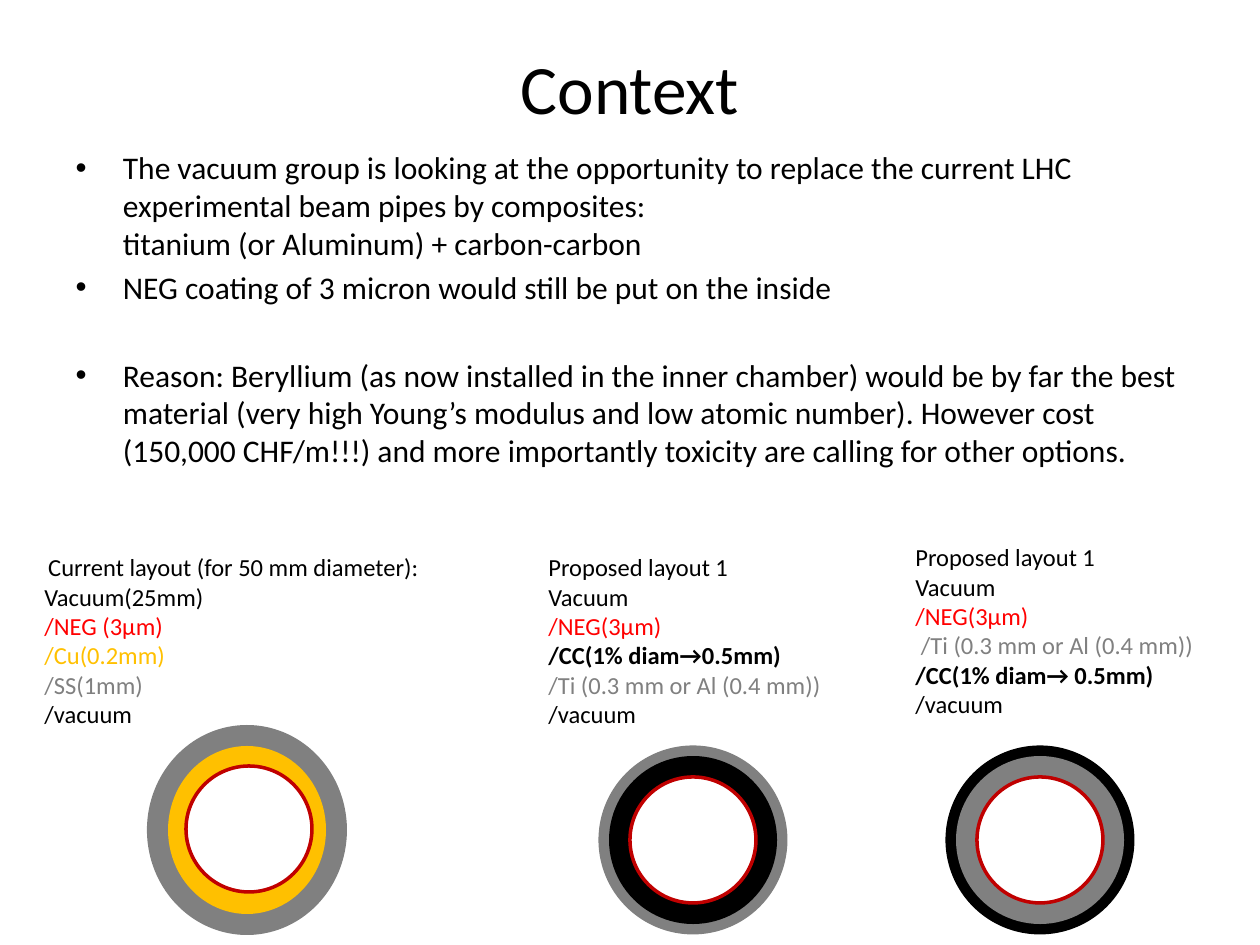
from pptx import Presentation
from pptx.dml.color import RGBColor
from pptx.enum.shapes import MSO_SHAPE as Preset
from pptx.enum.text import MSO_ANCHOR as Anchor, MSO_AUTO_SIZE as AutoSize, PP_ALIGN as Align
from pptx.util import Emu, Pt

BLACK = RGBColor(0, 0, 0)
WHITE = RGBColor(255, 255, 255)
GREY = RGBColor(0x80, 0x80, 0x80)
AMBER = RGBColor(0xFF, 0xC0, 0x00)
RED = RGBColor(0xFF, 0, 0)
DARK_RED = RGBColor(0xC0, 0, 0)


class SlideBuilder:
    font = "Calibri"
    title_size = 39.6
    body_size = 18
    label_size = 14
    px_per_inch = 126

    def __init__(self, deck):
        self.page = deck.slides.add_slide(deck.slide_layouts[1])

    @classmethod
    def px(cls, length):
        return Emu(round(length * 914400 / cls.px_per_inch))

    def place(self, box, left, top, width, height):
        box.left, box.top = self.px(left), self.px(top)
        box.width, box.height = self.px(width), self.px(height)

    def add_text(self, frame, paragraphs, size):
        for index, lines in enumerate(paragraphs):
            para = frame.paragraphs[0] if index == 0 else frame.add_paragraph()
            for number, (text, color, bold) in enumerate(lines):
                if number:
                    para.add_line_break()
                span = para.add_run()
                span.text = text
                span.font.name = self.font
                span.font.size = Pt(size)
                span.font.color.rgb = color
                span.font.bold = bold

    def title(self, text, *bounds):
        box = self.page.shapes.title
        self.place(box, *bounds)
        frame = box.text_frame
        frame.auto_size = AutoSize.NONE
        frame.vertical_anchor = Anchor.MIDDLE
        self.add_text(frame, [[line(text)]], self.title_size)
        frame.paragraphs[0].alignment = Align.CENTER

    def bullets(self, paragraphs, *bounds):
        box = self.page.placeholders[1]
        self.place(box, *bounds)
        frame = box.text_frame
        frame.auto_size = AutoSize.NONE
        self.add_text(frame, paragraphs, self.body_size)
        frame.paragraphs[-1].space_before = Pt(28.5)

    def label(self, paragraphs, *bounds, heading=Align.LEFT):
        box = self.page.shapes.add_textbox(*map(self.px, bounds))
        frame = box.text_frame
        frame.word_wrap = False
        frame.auto_size = AutoSize.SHAPE_TO_FIT_TEXT
        self.add_text(frame, paragraphs, self.label_size)
        frame.paragraphs[0].alignment = heading

    def disc(self, center_x, center_y, width, height, fill, outline=None):
        bounds = (center_x - width / 2, center_y - height / 2, width, height)
        disc = self.page.shapes.add_shape(Preset.OVAL, *map(self.px, bounds))
        disc.shadow.inherit = False
        disc.fill.solid()
        disc.fill.fore_color.rgb = fill
        if outline is None:
            disc.line.fill.background()
        else:
            disc.line.color.rgb = outline
            disc.line.width = Pt(2)

    def bore(self, center_x, center_y):
        self.disc(center_x, center_y, 126, 126, WHITE, DARK_RED)

    def proposed_pipe(self, center_x, outer, inner):
        self.disc(center_x, 840, 189, 189, outer)
        self.disc(center_x, 840, 168, 168, inner)
        self.bore(center_x, 840)


def line(text, color=BLACK, bold=False):
    return text, color, bold


def main():
    deck = Presentation()
    deck.slide_width = SlideBuilder.px(1260)
    deck.slide_height = SlideBuilder.px(945)
    slide = SlideBuilder(deck)

    slide.title("Context", 63, 38, 1134, 98)
    slide.bullets([
        [line("The vacuum group is looking at the opportunity to replace the current LHC "
              "experimental beam pipes by composites:"),
         line("titanium (or Aluminum) + carbon-carbon")],
        [line("NEG coating of 3 micron would still be put on the inside")],
        [line("Reason: Beryllium (as now installed in the inner chamber) would be by far the best "
              "material (very high Young’s modulus and low atomic number). However cost "
              "(150,000 CHF/m!!!) and more importantly toxicity are calling for other options.")],
    ], 63, 142, 1134, 624)

    slide.disc(247, 830, 200, 210, GREY)
    slide.disc(247, 830, 158, 168, AMBER)
    slide.bore(249, 829)
    slide.proposed_pipe(693, GREY, BLACK)
    slide.proposed_pipe(1040, BLACK, GREY)

    slide.label([
        [line("Current layout (for 50 mm diameter):")],
        [line("Vacuum(25mm)"), line("/NEG (3μm)", RED)],
        [line("/Cu(0.2mm)", AMBER)],
        [line("/SS(1mm)", GREY)],
        [line("/vacuum")],
    ], 32, 546, 403, 190, heading=Align.CENTER)

    slide.label([
        [line("Proposed layout 1")],
        [line("Vacuum"), line("/NEG(3μm)", RED), line("/CC(1% diam→0.5mm)", bold=True)],
        [line("/Ti (0.3 mm or Al (0.4 mm))", GREY)],
        [line("/vacuum")],
    ], 536, 546, 299, 220)

    slide.label([
        [line("Proposed layout 1")],
        [line("Vacuum"), line("/NEG(3μm)", RED), line(" /Ti (0.3 mm or Al (0.4 mm))", GREY)],
        [line("/CC(1% diam→ 0.5mm)", bold=True)],
        [line("/vacuum")],
    ], 903, 536, 310, 220)

    deck.save("out.pptx")


if __name__ == "__main__":
    main()
